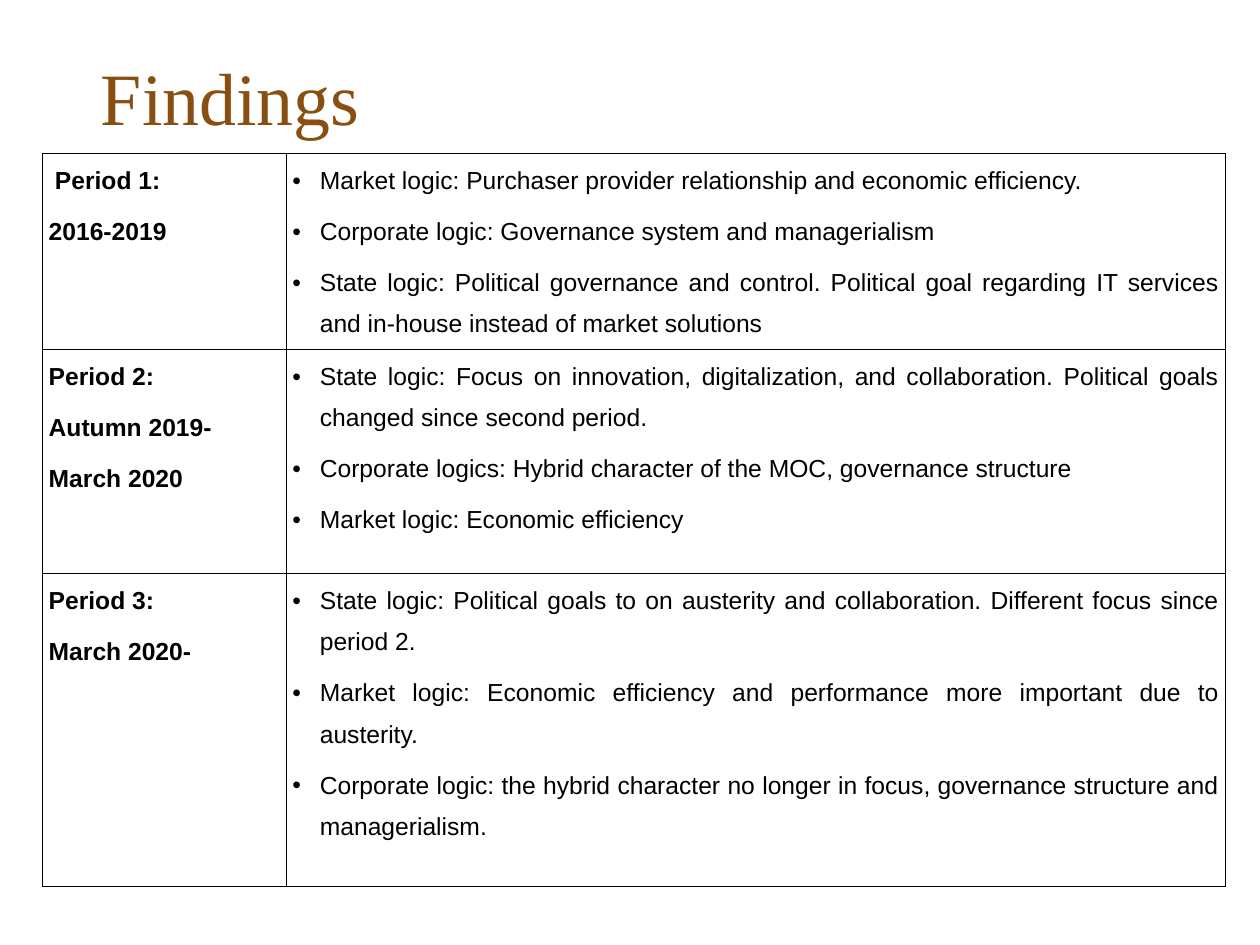
"""Build the Findings slide: a title above a table of logics per period."""
from dataclasses import dataclass

from lxml import etree
from pptx import Presentation
from pptx import util as u
from pptx.dml import color
from pptx.enum import text
from pptx.oxml import ns


@dataclass(frozen=True)
class Theme:
    title_font: str = "Times New Roman"
    body_font: str = "Arial"
    title_color: str = "894E11"
    ink: str = "000000"
    title_size: int = 60
    body_size: int = 20
    border_width: int = 1
    line_spacing: float = 1.5
    space_after: int = 8


THEME = Theme()
BULLET_INDENT = u.Inches(0.31)
CELL_MARGIN = u.Inches(0.07)
COLUMN_WIDTHS = (2.75, 10.6)
ROW_HEIGHTS = (2.22, 2.53, 3.53)
FINDINGS = (
    (
        ("Period 1:", "2016-2019"),
        (
            "Market logic: Purchaser provider relationship and economic efficiency.",
            "Corporate logic: Governance system and managerialism",
            "State logic: Political governance and control. Political goal regarding "
            "IT services and in-house instead of market solutions",
        ),
    ),
    (
        ("Period 2:", "Autumn 2019-", "March 2020"),
        (
            "State logic: Focus on innovation, digitalization, and collaboration. "
            "Political goals changed since second period.",
            "Corporate logics: Hybrid character of the MOC, governance structure",
            "Market logic: Economic efficiency",
        ),
    ),
    (
        ("Period 3:", "March 2020-"),
        (
            "State logic: Political goals to on austerity and collaboration. "
            "Different focus since period 2.",
            "Market logic: Economic efficiency and performance more important "
            "due to austerity.",
            "Corporate logic: the hybrid character no longer in focus, governance "
            "structure and managerialism.",
        ),
    ),
)


def style_font(font, name, size, rgb, bold=False):
    font.name = name
    font.size = u.Pt(size)
    font.bold = bold
    font.color.rgb = color.RGBColor.from_string(rgb)


def add_title(page, wording):
    title = page.shapes.title
    title.left, title.top = u.Inches(1.08), u.Inches(0.24)
    title.width, title.height = u.Inches(12.01), u.Inches(1.68)
    frame = title.text_frame
    frame.text = wording
    frame.vertical_anchor = text.MSO_ANCHOR.MIDDLE
    frame.margin_left = frame.margin_right = u.Inches(0.06)
    frame.margin_top = frame.margin_bottom = u.Inches(0.06)
    para = frame.paragraphs[0]
    para.alignment = text.PP_ALIGN.LEFT
    style_font(para.runs[0].font, THEME.title_font, THEME.title_size, THEME.title_color)


def add_bullet(para):
    properties = para._p.get_or_add_pPr()
    properties.set("marL", str(BULLET_INDENT))
    properties.set("indent", str(-BULLET_INDENT))
    etree.SubElement(properties, ns.qn("a:buFont"), typeface=THEME.body_font)
    etree.SubElement(properties, ns.qn("a:buChar"), char="•")


def add_borders(cell):
    properties = cell._tc.get_or_add_tcPr()
    for position, side in enumerate(("lnL", "lnR", "lnT", "lnB")):
        line = etree.Element(ns.qn(f"a:{side}"), w=str(u.Pt(THEME.border_width)))
        fill = etree.SubElement(line, ns.qn("a:solidFill"))
        etree.SubElement(fill, ns.qn("a:srgbClr"), val=THEME.ink)
        properties.insert(position, line)


def fill_cell(cell, lines, heading):
    cell.fill.background()
    add_borders(cell)
    cell.margin_left = cell.margin_right = CELL_MARGIN
    cell.margin_top = cell.margin_bottom = 0
    cell.text_frame.text = "\n".join(lines)
    for para in cell.text_frame.paragraphs:
        para.alignment = text.PP_ALIGN.JUSTIFY
        para.line_spacing = THEME.line_spacing
        para.space_after = u.Pt(THEME.space_after)
        style_font(para.runs[0].font, THEME.body_font, THEME.body_size, THEME.ink, heading)
        if not heading:
            add_bullet(para)


def add_findings_table(page):
    frame = page.shapes.add_table(
        len(FINDINGS), len(COLUMN_WIDTHS), u.Inches(0.48), u.Inches(1.73),
        u.Inches(sum(COLUMN_WIDTHS)), u.Inches(sum(ROW_HEIGHTS)),
    )
    table = frame.table
    table.first_row = table.horz_banding = False
    for column, width in zip(table.columns, COLUMN_WIDTHS):
        column.width = u.Inches(width)
    for row, height, (period, logics) in zip(table.rows, ROW_HEIGHTS, FINDINGS):
        row.height = u.Inches(height)
        fill_cell(row.cells[0], period, heading=True)
        fill_cell(row.cells[1], logics, heading=False)
    first_period = table.cell(0, 0).text_frame.paragraphs[0]
    first_period._p.get_or_add_pPr().set("indent", str(CELL_MARGIN))


def main():
    deck = Presentation()
    deck.slide_width, deck.slide_height = u.Inches(14.22), u.Inches(10.67)
    page = deck.slides.add_slide(deck.slide_layouts[5])
    add_title(page, "Findings")
    add_findings_table(page)
    deck.save("out.pptx")


if __name__ == "__main__":
    main()
